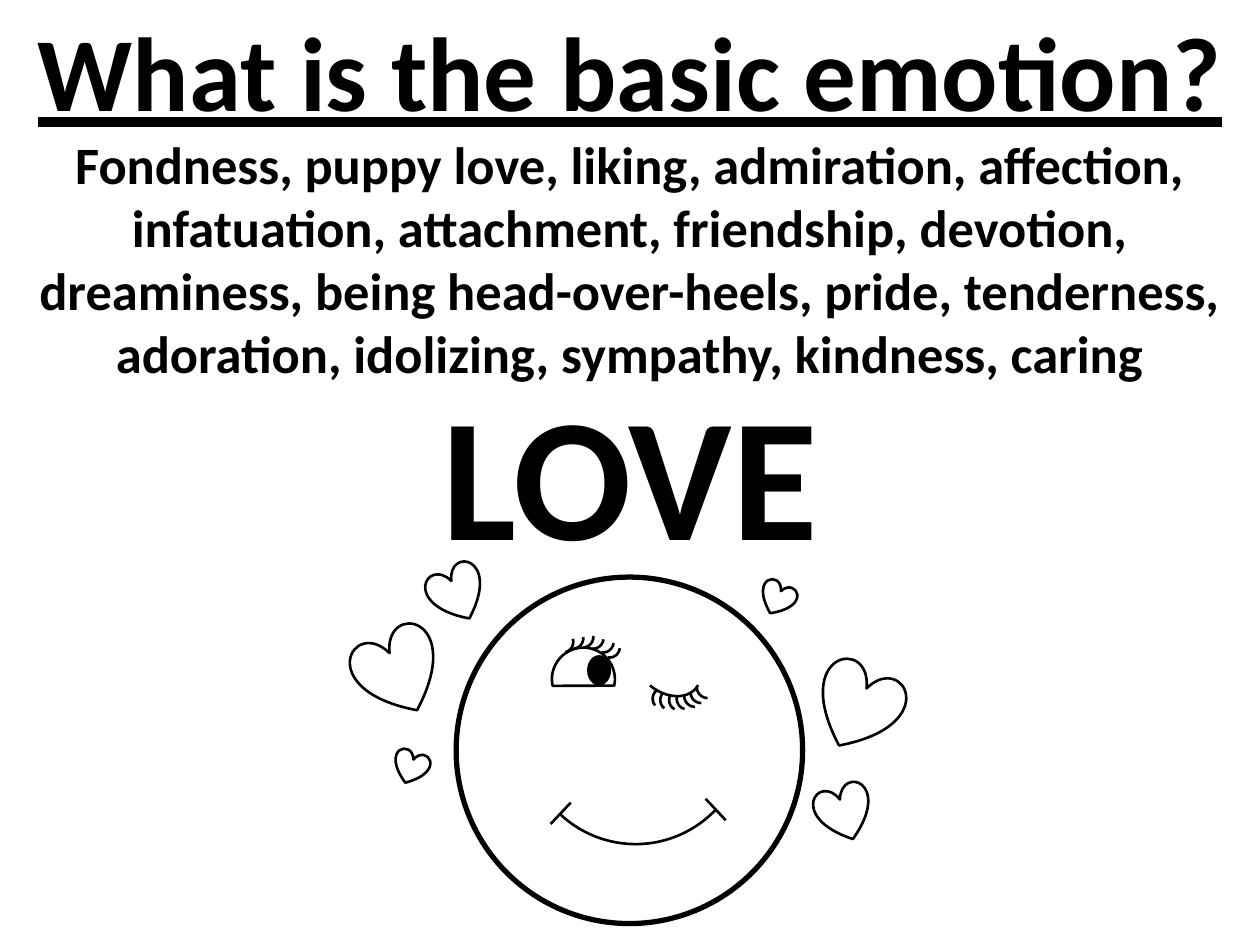
from lxml.etree import SubElement
from pptx import Presentation
from pptx.dml.color import RGBColor
from pptx.enum.shapes import MSO_CONNECTOR, MSO_SHAPE as Shape
from pptx.enum.text import MSO_ANCHOR as Anchor, PP_ALIGN as Align
from pptx.oxml.ns import qn
from pptx.util import Inches, Pt

COLORS = {"ink": "000000", "paper": "FFFFFF"}
FONT = "Calibri"
WIDTH, HEIGHT = 10, 7.5
THIN, THICK = 1.5, 3

TITLE = "What is the basic emotion?"
FEELINGS = (
    "Fondness, puppy love, liking, admiration, affection, infatuation, "
    "attachment, friendship, devotion, dreaminess, being head-over-heels, "
    "pride, tenderness, adoration, idolizing, sympathy, kindness, caring"
)
ANSWER = "LOVE"

# Left, top, rotation of each lash
LASH_SIZE = 0.17
WINK_LASHES = [
    (5.48, 5.41, 180), (5.43, 5.44, 180), (5.53, 5.37, 180), (5.37, 5.46, 195.7),
    (5.31, 5.47, 209.3), (5.24, 5.47, 218.5), (5.18, 5.46, 230.6),
]
OPEN_LASHES = [
    (4.70, 5.01, 96.8), (4.75, 5.05, 96.8), (4.62, 4.98, 96.8),
    (4.54, 4.97, 85.3), (4.46, 4.98, 85.3), (4.38, 5.01, 73.6),
]
# Start and end of the marks at the corners of the mouth
MOUTH_CORNERS = [((5.60, 6.34), (5.76, 6.51)), ((4.53, 6.37), (4.37, 6.54))]

HEART_SIZES = {"large": (0.67, 0.67), "medium": (0.44, 0.44), "small": (0.28, 0.26)}
# Size, left, top, rotation, mirrored
HEARTS = [
    ("large", 2.83, 5.00, 334.3, False),
    ("medium", 3.41, 4.49, 334.3, False),
    ("small", 3.12, 5.96, 19.4, False),
    ("large", 6.47, 5.28, 25.7, True),
    ("medium", 6.48, 6.23, 341.8, True),
    ("small", 6.03, 4.62, 25.9, True),
]


def color(name):
    return RGBColor.from_string(COLORS[name])


def write(box, text, size, place, anchor, underline=None):
    box.left, box.top, box.width, box.height = map(Inches, place)
    frame = box.text_frame
    frame.word_wrap = True
    frame.vertical_anchor = anchor
    para = frame.paragraphs[0]
    para.alignment = Align.CENTER
    span = para.add_run()
    span.text = text
    font = span.font
    font.name, font.size, font.bold, font.underline = FONT, Pt(size), True, underline
    font.color.rgb = color("ink")


def draw(group, kind, place, fill=None, rotation=0, flip=None, weight=THIN, adjust=()):
    """Add an outlined preset shape; flip is "flipH", "flipV" or None."""
    shape = group.shapes.add_shape(kind, *map(Inches, place))
    shape.shadow.inherit = False
    shape.rotation = rotation
    if flip:
        shape._element.spPr.xfrm.set(flip, "1")
    for index, value in enumerate(adjust):
        shape.adjustments[index] = value
    if fill:
        shape.fill.solid()
        shape.fill.fore_color.rgb = color(fill)
    else:
        shape.fill.background()
    shape.line.color.rgb = color("ink")
    shape.line.width = Pt(weight)


def draw_line(group, start, end):
    line = group.shapes.add_connector(MSO_CONNECTOR.STRAIGHT, *map(Inches, start + end))
    line.line.color.rgb = color("ink")
    line.line.width = Pt(THIN)
    SubElement(line._element.spPr, qn("a:effectLst"))


def draw_face(group):
    draw(group, Shape.OVAL, (3.62, 4.58, 2.75, 2.75), "paper", weight=THICK)
    draw(group, Shape.ARC, (4.17, 4.95, 1.75, 1.75), rotation=43.1, flip="flipV")
    for start, end in MOUTH_CORNERS:
        draw_line(group, start, end)
    draw(group, Shape.CHORD, (4.38, 5.14, 0.5, 0.5), "paper", 101.9, adjust=(39.417, 162))
    draw(group, Shape.OVAL, (4.67, 5.21, 0.17, 0.22), "ink")
    draw(group, Shape.ARC, (5.08, 4.98, 0.43, 0.59), rotation=129.5, adjust=(158.422, 0))
    for left, top, rotation in WINK_LASHES + OPEN_LASHES:
        draw(group, Shape.ARC, (left, top, LASH_SIZE, LASH_SIZE), rotation=rotation)


def draw_hearts(group):
    for size, left, top, rotation, mirrored in HEARTS:
        draw(group, Shape.HEART, (left, top, *HEART_SIZES[size]), "paper", rotation,
             "flipH" if mirrored else None)


def main():
    deck = Presentation()
    deck.slide_width, deck.slide_height = Inches(WIDTH), Inches(HEIGHT)
    page = deck.slides.add_slide(deck.slide_layouts[0])
    title, subtitle = page.placeholders
    write(title, TITLE, 60, (0, -0.25, WIDTH, 1.61), Anchor.MIDDLE, underline=True)
    write(subtitle, FEELINGS, 30, (0, 1, WIDTH, 2), Anchor.TOP)
    answer = page.shapes.add_textbox(0, 0, 0, 0)
    write(answer, ANSWER, 100, (0.75, 2.93, 8.5, 1.61), Anchor.MIDDLE)
    group = page.shapes.add_group_shape()
    draw_face(group)
    draw_hearts(group)
    deck.save("out.pptx")


if __name__ == "__main__":
    main()
